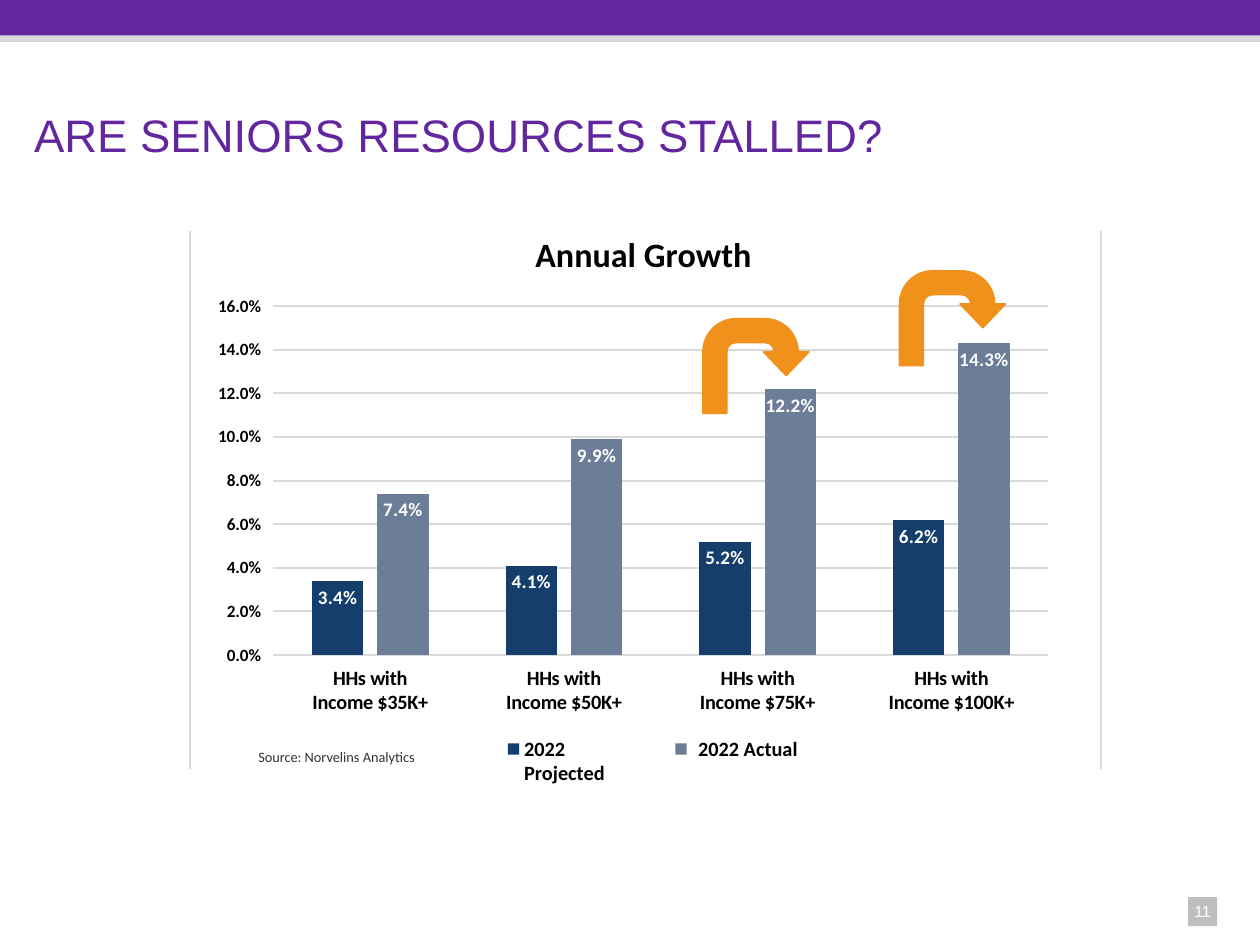
"""Build the slide on the growth of seniors' household resources."""
from pptx import Presentation
from pptx.chart.data import CategoryChartData
from pptx.dml.color import RGBColor
from pptx.enum.chart import XL_CHART_TYPE, XL_LABEL_POSITION, XL_TICK_MARK
from pptx.enum.shapes import MSO_CONNECTOR, MSO_SHAPE
from pptx.enum.text import MSO_ANCHOR, PP_ALIGN
from pptx.oxml.xmlchemy import OxmlElement
from pptx.util import Inches, Pt

PURPLE, ORANGE, GREY = "62269E", "EF911B", "D9D9D9"
NAVY, SLATE = "153E6D", "6C7E97"


def paint(color_format, color):
    color_format.rgb = RGBColor.from_string(color)


def write(frame, text, size, color, font="Calibri", bold=False,
          align=PP_ALIGN.LEFT, anchor=MSO_ANCHOR.TOP, margin=0):
    frame.word_wrap = True
    frame.vertical_anchor = anchor
    frame.margin_left = frame.margin_right = Inches(margin)
    frame.margin_top = frame.margin_bottom = Inches(margin / 2)
    paragraph = frame.paragraphs[0]
    paragraph.alignment = align
    run = paragraph.add_run()
    run.text = text
    run.font.name, run.font.size, run.font.bold = font, Pt(size), bold
    paint(run.font.color, color)


presentation = Presentation()
presentation.slide_width, presentation.slide_height = Inches(10), Inches(7.5)
slide = presentation.slides.add_slide(presentation.slide_layouts[5])

title = slide.shapes.title
title.left, title.top = Inches(0.17), Inches(0.41)
title.width, title.height = Inches(9.67), Inches(0.92)
write(title.text_frame, "ARE SENIORS RESOURCES STALLED?", 26, PURPLE, font="Arial",
      anchor=MSO_ANCHOR.BOTTOM, margin=0.1)

chart_left, chart_top, chart_width, chart_height = 1.51, 1.7, 7.23, 4.4
data = CategoryChartData(number_format="0.0%")
data.categories = [f"HHs with\nIncome ${income}K+" for income in (35, 50, 75, 100)]
data.add_series("2022 Projected", (0.034, 0.041, 0.052, 0.062))
data.add_series("2022 Actual", (0.074, 0.099, 0.122, 0.143))
chart = slide.shapes.add_chart(
    XL_CHART_TYPE.COLUMN_CLUSTERED, Inches(chart_left), Inches(chart_top),
    Inches(chart_width), Inches(chart_height), data).chart
chart.font.name, chart.font.size, chart.font.bold = "Calibri", Pt(11.6), True
paint(chart.font.color, "000000")
chart.has_legend = False
chart.has_title = True
write(chart.chart_title.text_frame, "Annual Growth", 19.5, "000000", bold=True)

plot = chart.plots[0]
plot.vary_by_categories = False
plot.gap_width, plot.overlap = 150, -27
for series, color in zip(plot.series, (NAVY, SLATE)):
    series.format.fill.solid()
    paint(series.format.fill.fore_color, color)
    labels = series.data_labels
    labels.show_value = True
    labels.number_format, labels.number_format_is_linked = "0.0%", False
    labels.position = XL_LABEL_POSITION.INSIDE_END
    labels.font.name, labels.font.size, labels.font.bold = "Calibri", Pt(10.9), True
    paint(labels.font.color, "FFFFFF")

value_axis = chart.value_axis
value_axis.minimum_scale, value_axis.maximum_scale, value_axis.major_unit = 0, 0.16, 0.02
value_axis.tick_labels.number_format = "0.0%"
value_axis.tick_labels.number_format_is_linked = False
value_axis.tick_labels.font.size = Pt(9.8)
value_axis.major_gridlines.format.line.width = Pt(1.1)
paint(value_axis.major_gridlines.format.line.color, GREY)
for axis in (value_axis, chart.category_axis):
    axis.major_tick_mark = XL_TICK_MARK.OUTSIDE
    axis.format.line.fill.background()

chart_element = chart._chartSpace.chart
for tag, position, place in [
    ("c:title", 1, {"x": 4.2, "y": 1.78}),
    ("c:plotArea", 0, {"x": 2.17, "y": 2.43, "w": 6.15, "h": 2.77}),
]:
    part = chart_element.xpath(tag)[0]
    for old_layout in part.xpath("c:layout"):
        part.remove(old_layout)
    layout, manual = OxmlElement("c:layout"), OxmlElement("c:manualLayout")
    layout.append(manual)
    settings = {"xMode": "edge", "yMode": "edge"}
    if tag == "c:plotArea":
        settings = {"layoutTarget": "inner", **settings}
    for key, length in place.items():
        offset = {"x": chart_left, "y": chart_top}.get(key, 0)
        extent = chart_width if key in "xw" else chart_height
        settings[key] = f"{(length - offset) / extent:.4f}"
    for key, value in settings.items():
        setting = OxmlElement(f"c:{key}")
        setting.set("val", value)
        manual.append(setting)
    part.insert(position, layout)

blocks = []
for left, top, width, height, color in [
    (0, 0, 10, 0.33, PURPLE),
    (0, 0.28, 10, 0.05, GREY),
    (4.03, 5.9, 0.09, 0.09, NAVY),
    (5.36, 5.9, 0.09, 0.09, SLATE),
    (9.43, 7.12, 0.23, 0.23, "BFBFBF"),
]:
    block = slide.shapes.add_shape(
        MSO_SHAPE.RECTANGLE, Inches(left), Inches(top), Inches(width), Inches(height))
    block.shadow.inherit = False
    block.fill.solid()
    paint(block.fill.fore_color, color)
    block.line.fill.background()
    blocks.append(block)
write(blocks[-1].text_frame, "11", 9, "FFFFFF", font="Arial",
      align=PP_ALIGN.CENTER, anchor=MSO_ANCHOR.MIDDLE)

for text, left, top, width, height, size, color, bold in [
    ("2022 Projected", 4.16, 5.84, 0.9, 0.4, 11.6, "000000", True),
    ("2022 Actual", 5.54, 5.84, 1, 0.2, 11.6, "000000", True),
    ("Source: Norvelins Analytics", 2.05, 5.94, 1.7, 0.15, 8.2, "323232", False),
]:
    caption = slide.shapes.add_textbox(
        Inches(left), Inches(top), Inches(width), Inches(height))
    write(caption.text_frame, text, size, color, bold=bold)

border_top, border_bottom = 1.83, 6.1
for side in (chart_left, chart_left + chart_width):
    border = slide.shapes.add_connector(
        MSO_CONNECTOR.STRAIGHT, Inches(side), Inches(border_top),
        Inches(side), Inches(border_bottom))
    border.line.width = Pt(1.1)
    paint(border.line.color, GREY)
    border._element.spPr.append(OxmlElement("a:effectLst"))

for left, top in [(5.58, 2.53), (7.14, 2.15)]:
    arrow = slide.shapes.add_shape(
        MSO_SHAPE.U_TURN_ARROW, Inches(left), Inches(top), Inches(0.84), Inches(0.75))
    arrow.shadow.inherit = False
    for index, adjustment in enumerate((0.25, 0.24, 0.25, 0.36, 0.6)):
        arrow.adjustments[index] = adjustment
    arrow.fill.solid()
    paint(arrow.fill.fore_color, ORANGE)
    arrow.line.width = Pt(1)
    paint(arrow.line.color, ORANGE)

presentation.save("out.pptx")
